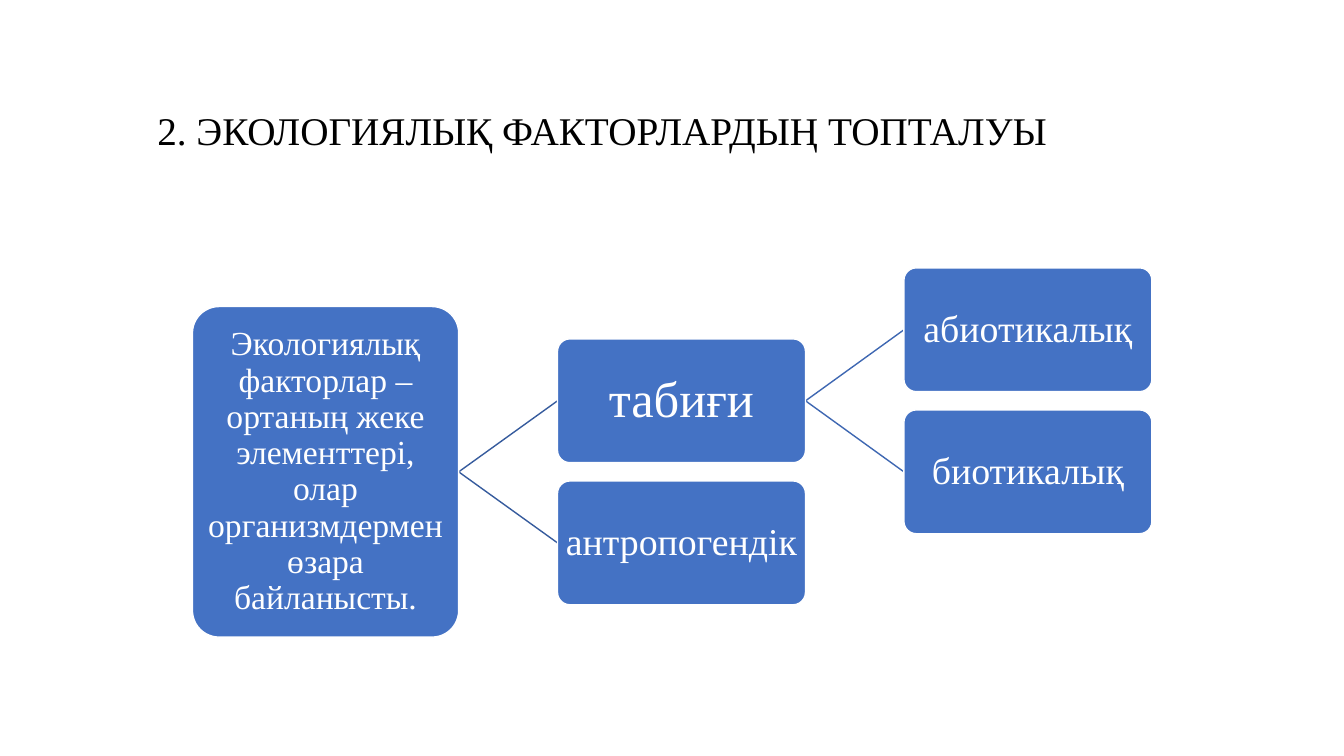
from dataclasses import dataclass

from lxml import etree
from pptx import Presentation
from pptx.dml.color import RGBColor
from pptx.enum.shapes import MSO_CONNECTOR, MSO_SHAPE
from pptx.enum.text import MSO_ANCHOR, MSO_AUTO_SIZE, PP_ALIGN
from pptx.oxml.ns import qn
from pptx.slide import Slide
from pptx.text.text import TextFrame
from pptx.util import Cm, Pt

ROUNDED = MSO_SHAPE.ROUNDED_RECTANGLE
STRAIGHT = MSO_CONNECTOR.STRAIGHT
MIDDLE = MSO_ANCHOR.MIDDLE
NO_AUTOFIT = MSO_AUTO_SIZE.NONE
LEFT, CENTER = PP_ALIGN.LEFT, PP_ALIGN.CENTER

FONT = "Times New Roman"
COLORS = {
    "title": "000000",
    "box": "4472C4",
    "white": "FFFFFF",
    "root_link": "365B9D",
    "branch_link": "3E67B2",
}

# Tree geometry in centimetres
BOX_W, BOX_H = 6.25, 3.12
COL_2, COL_3 = 14.05, 22.78
ROOT_Y = 11.89
HALF_STEP = 1.79  # vertical offset of a child from its parent
INSET = 0.06


@dataclass
class Node:
    text: str
    left: float
    middle: float
    size: int
    width: float = BOX_W
    height: float = BOX_H


@dataclass
class Link:
    parent: Node
    child: Node
    color: str


def rgb(name: str) -> RGBColor:
    return RGBColor.from_string(COLORS[name])


def format_text(tf: TextFrame, text: str, size: int, color: str, align: PP_ALIGN) -> None:
    tf.text = text
    tf.word_wrap = True
    tf.auto_size = NO_AUTOFIT
    tf.vertical_anchor = MIDDLE
    p = tf.paragraphs[0]
    p.alignment = align
    p.line_spacing = 0.9
    p.space_before = Pt(0)
    font = p.runs[0].font
    font.name = FONT
    font.size = Pt(size)
    font.color.rgb = rgb(color)


def draw_node(s: Slide, node: Node) -> None:
    sp = s.shapes.add_shape(ROUNDED, Cm(node.left), Cm(node.middle - node.height / 2),
                            Cm(node.width), Cm(node.height))
    sp.adjustments[0] = 0.1
    sp.shadow.inherit = False
    sp.fill.solid()
    sp.fill.fore_color.rgb = rgb("box")
    sp.line.color.rgb = rgb("white")
    sp.line.width = Pt(1)
    tf = sp.text_frame
    tf.margin_left = tf.margin_right = tf.margin_top = tf.margin_bottom = Cm(INSET)
    format_text(tf, node.text, node.size, "white", CENTER)


def draw_link(s: Slide, link: Link) -> None:
    parent, child = link.parent, link.child
    line = s.shapes.add_connector(STRAIGHT, Cm(parent.left + parent.width), Cm(parent.middle),
                                  Cm(child.left), Cm(child.middle))
    line.line.color.rgb = rgb(link.color)
    line.line.width = Pt(1)
    etree.SubElement(line._element.spPr, qn("a:effectLst"))


def main() -> None:
    prs = Presentation()
    prs.slide_width, prs.slide_height = Cm(33.87), Cm(19.05)
    s = prs.slides.add_slide(prs.slide_layouts[5])

    # Title
    title = s.shapes.title
    title.left, title.top, title.width, title.height = Cm(3.71), Cm(1.5), Cm(29.21), Cm(3.68)
    format_text(title.text_frame, "2. ЭКОЛОГИЯЛЫҚ ФАКТОРЛАРДЫҢ ТОПТАЛУЫ", 28, "title", LEFT)

    # Tree of factors
    root = Node("Экологиялық факторлар – ортаның жеке элементтері, "
                "олар организмдермен өзара байланысты.", 4.85, ROOT_Y, 24, 6.71, 8.33)
    natural = Node("табиғи", COL_2, ROOT_Y - HALF_STEP, 36)
    human = Node("антропогендік", COL_2, ROOT_Y + HALF_STEP, 27)
    abiotic = Node("абиотикалық", COL_3, natural.middle - HALF_STEP, 27)
    biotic = Node("биотикалық", COL_3, natural.middle + HALF_STEP, 27)

    links = [
        Link(root, natural, "root_link"),
        Link(root, human, "root_link"),
        Link(natural, abiotic, "branch_link"),
        Link(natural, biotic, "branch_link"),
    ]
    for link in links:
        draw_link(s, link)
    for node in (root, natural, abiotic, biotic, human):
        draw_node(s, node)

    prs.save("out.pptx")


if __name__ == "__main__":
    main()
